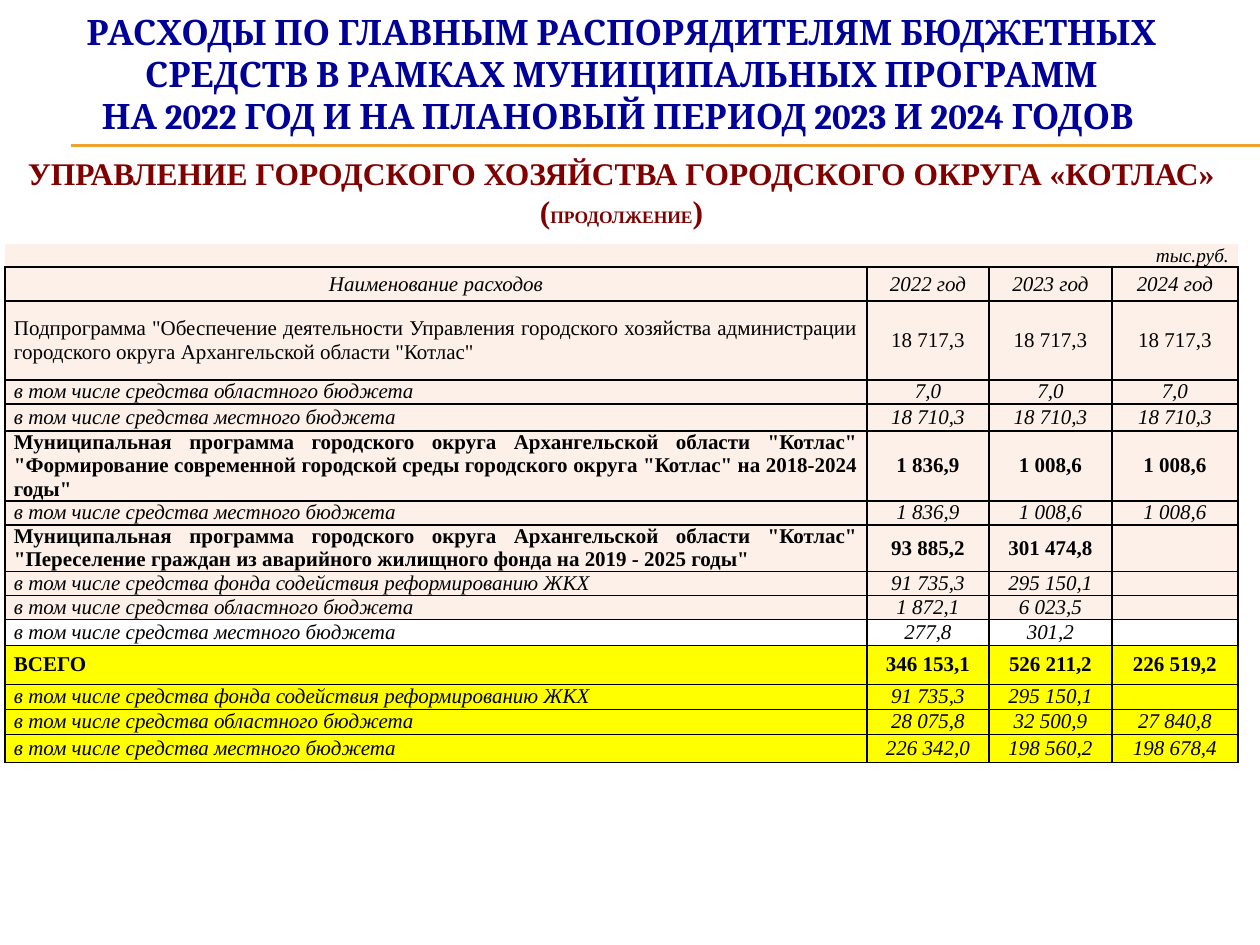
from lxml.etree import SubElement
from pptx import Presentation
from pptx.dml.color import RGBColor as RGB
from pptx.enum.shapes import MSO_CONNECTOR as Connector
from pptx.enum.text import MSO_ANCHOR as Anchor, MSO_AUTO_SIZE as AutoSize, PP_ALIGN as Align
from pptx.oxml.ns import qn
from pptx.util import Pt

PX = 914400 // 126
COLORS = {
    "rule": "F0A22E", "heading": "000099", "department": "800000",
    "text": "000000", "peach": "FCF0E8", "white": "FFFFFF", "total": "FFFF00",
}
SERIF = "Times New Roman"
REGIONAL = "в том числе средства областного бюджета"
LOCAL = "в том числе средства местного бюджета"
FUND = "в том числе средства фонда содействия реформированию ЖКХ"
PROGRAM = 'Муниципальная программа городского округа Архангельской области "Котлас" '


def format_run(run, font, size, color, bold=False, italic=False):
    run.font.name = font
    run.font.size = Pt(size)
    run.font.bold = bold
    run.font.italic = italic
    run.font.color.rgb = RGB.from_string(COLORS[color])


def add_border(cell, side, visible):
    line = SubElement(cell._tc.get_or_add_tcPr(), qn(f"a:ln{side}"), w=str(Pt(1)))
    if visible:
        fill = SubElement(line, qn("a:solidFill"))
        SubElement(fill, qn("a:srgbClr"), val=COLORS["text"])
    else:
        SubElement(line, qn("a:noFill"))


prs = Presentation()
prs.slide_width = 1260 * PX
prs.slide_height = 945 * PX
slide = prs.slides.add_slide(prs.slide_layouts[5])

for y in (145, 146):
    rule = slide.shapes.add_connector(Connector.STRAIGHT, 71 * PX, y * PX, 1260 * PX, y * PX)
    rule.line.color.rgb = RGB.from_string(COLORS["rule"])
    rule.line.width = Pt(0.75)
    SubElement(rule._element.spPr, qn("a:effectLst"))

title = slide.shapes.title
title.left, title.top, title.width, title.height = 5 * PX, 26 * PX, 1233 * PX, 189 * PX
title_frame = title.text_frame
title_frame.word_wrap = True
title_frame.auto_size = AutoSize.NONE
title_frame.vertical_anchor = Anchor.MIDDLE

heading = title_frame.paragraphs[0]
heading.text = (
    "РАСХОДЫ ПО ГЛАВНЫМ РАСПОРЯДИТЕЛЯМ БЮДЖЕТНЫХ СРЕДСТВ В РАМКАХ МУНИЦИПАЛЬНЫХ ПРОГРАММ\v"
    "НА 2022 ГОД И НА ПЛАНОВЫЙ ПЕРИОД 2023 И 2024 ГОДОВ "
)
heading.alignment = Align.CENTER
for run in heading.runs:
    format_run(run, "Cambria", 20, "heading", bold=True)

department = title_frame.add_paragraph()
department.alignment = Align.CENTER
department.space_before = Pt(10)
for text, size in (
    ("УПРАВЛЕНИЕ ГОРОДСКОГО ХОЗЯЙСТВА ГОРОДСКОГО ОКРУГА «КОТЛАС» (", 18),
    ("ПРОДОЛЖЕНИЕ", 10),
    (")", 18),
):
    run = department.add_run()
    run.text = text
    format_run(run, SERIF, size, "department", bold=True)

column_widths = (862, 122, 123, 126)
expenses = [
    (23, "peach", "italic", ("", "", "", "тыс.руб.")),
    (34, "peach", "italic", ("Наименование расходов", "2022 год", "2023 год", "2024 год")),
    (79, "peach", "plain", (
        'Подпрограмма "Обеспечение деятельности Управления городского хозяйства '
        'администрации городского округа Архангельской области "Котлас"',
        "18 717,3", "18 717,3", "18 717,3")),
    (24, "peach", "italic", (REGIONAL, "7,0", "7,0", "7,0")),
    (27, "peach", "italic", (LOCAL, "18 710,3", "18 710,3", "18 710,3")),
    (70, "peach", "bold", (
        PROGRAM + '"Формирование современной городской среды городского округа "Котлас" на 2018-2024 годы"',
        "1 836,9", "1 008,6", "1 008,6")),
    (24, "peach", "italic", (LOCAL, "1 836,9", "1 008,6", "1 008,6")),
    (46, "peach", "bold", (
        PROGRAM + '"Переселение граждан из аварийного жилищного фонда на 2019 - 2025 годы"',
        "93 885,2", "301 474,8", "")),
    (24, "peach", "italic", (FUND, "91 735,3", "295 150,1", "")),
    (24, "peach", "italic", (REGIONAL, "1 872,1", "6 023,5", "")),
    (26, "white", "italic", (LOCAL, "277,8", "301,2", "")),
    (39, "total", "bold", ("ВСЕГО", "346 153,1", "526 211,2", "226 519,2")),
    (25, "total", "italic", (FUND, "91 735,3", "295 150,1", "")),
    (25, "total", "italic", (REGIONAL, "28 075,8", "32 500,9", "27 840,8")),
    (28, "total", "italic", (LOCAL, "226 342,0", "198 560,2", "198 678,4")),
]

table_height = sum(height for height, *_ in expenses)
budget = slide.shapes.add_table(
    len(expenses), len(column_widths),
    5 * PX, 244 * PX, sum(column_widths) * PX, table_height * PX,
).table
budget.first_row = False
budget.horz_banding = False
for column, width in zip(budget.columns, column_widths):
    column.width = width * PX

for row, (height, fill, style, texts) in enumerate(expenses):
    budget.rows[row].height = height * PX
    for col, text in enumerate(texts):
        cell = budget.cell(row, col)
        for side in "LRTB":
            add_border(cell, side, visible=row > 0 or side == "B")
        cell.fill.solid()
        cell.fill.fore_color.rgb = RGB.from_string(COLORS[fill])
        cell.margin_left = cell.margin_right = 9 * PX
        cell.margin_top = cell.margin_bottom = 0
        cell.vertical_anchor = Anchor.MIDDLE
        paragraph = cell.text_frame.paragraphs[0]
        if not text:
            SubElement(paragraph._p, qn("a:endParaRPr"), sz="1000")
            continue
        paragraph.text = text
        if row == 0:
            paragraph.alignment = Align.RIGHT
        elif row > 1 and col == 0:
            paragraph.alignment = Align.JUSTIFY
        else:
            paragraph.alignment = Align.CENTER
        format_run(paragraph.runs[0], SERIF, 11 if row == 0 else 12, "text",
                   bold=style == "bold", italic=style == "italic")

prs.save("out.pptx")
